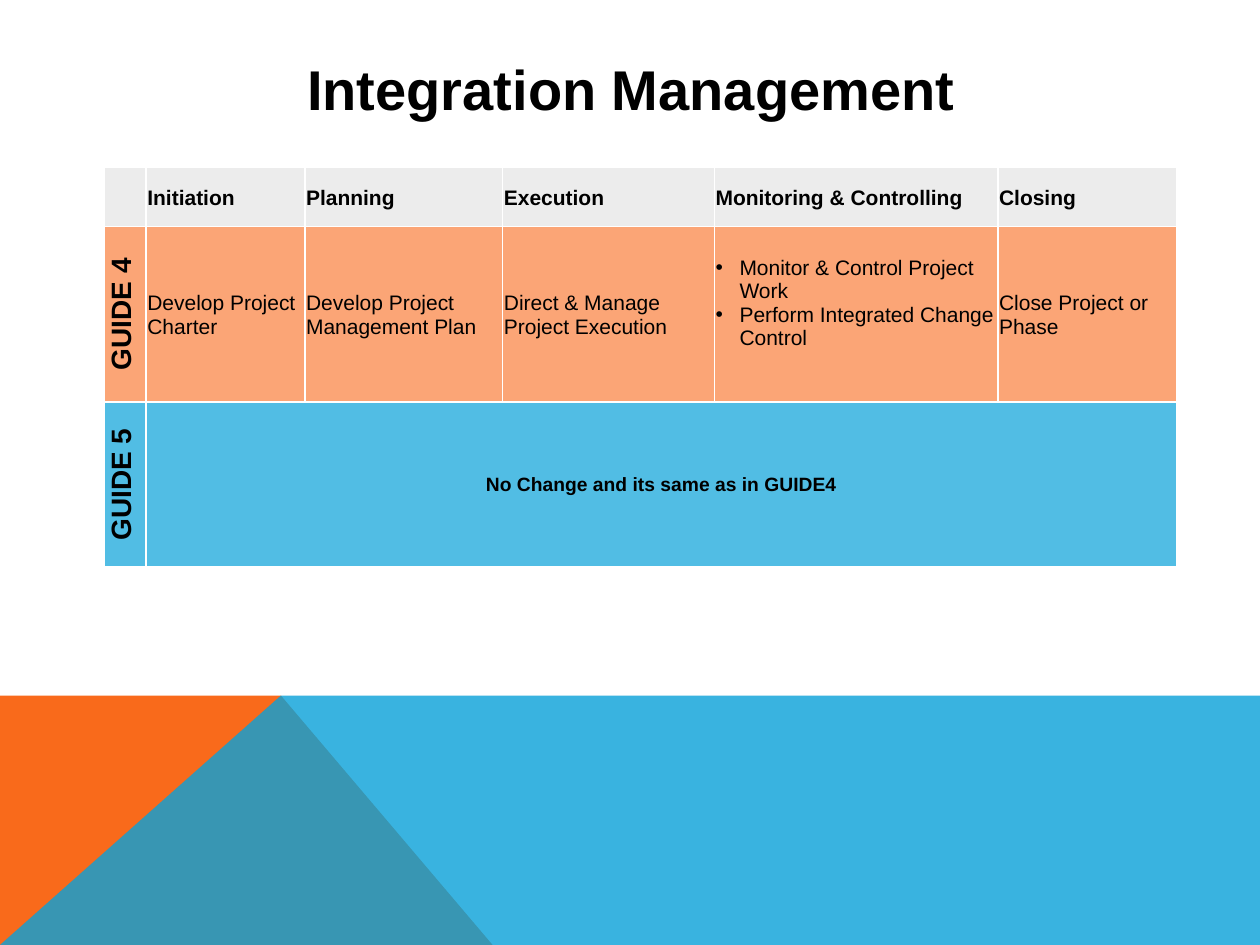
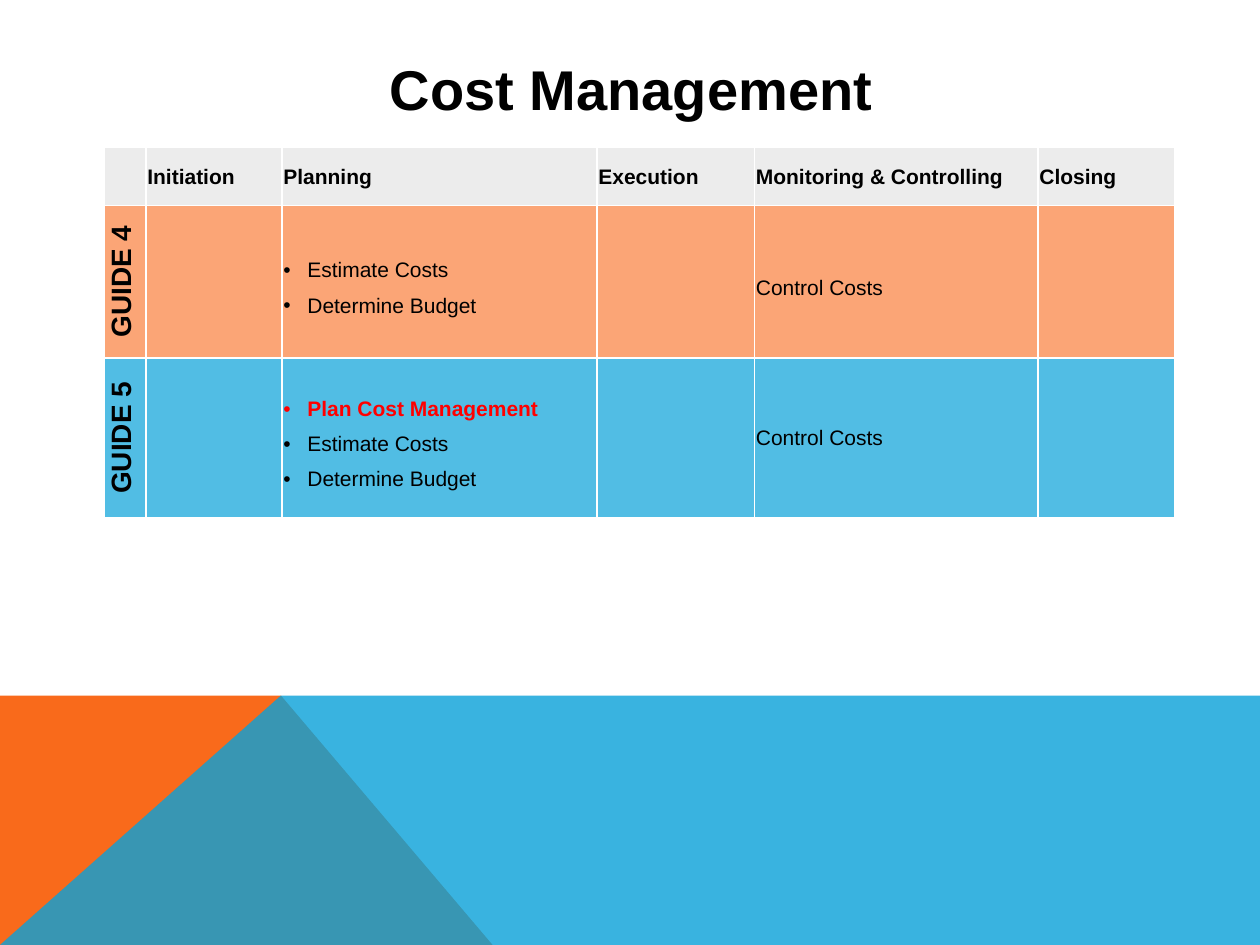
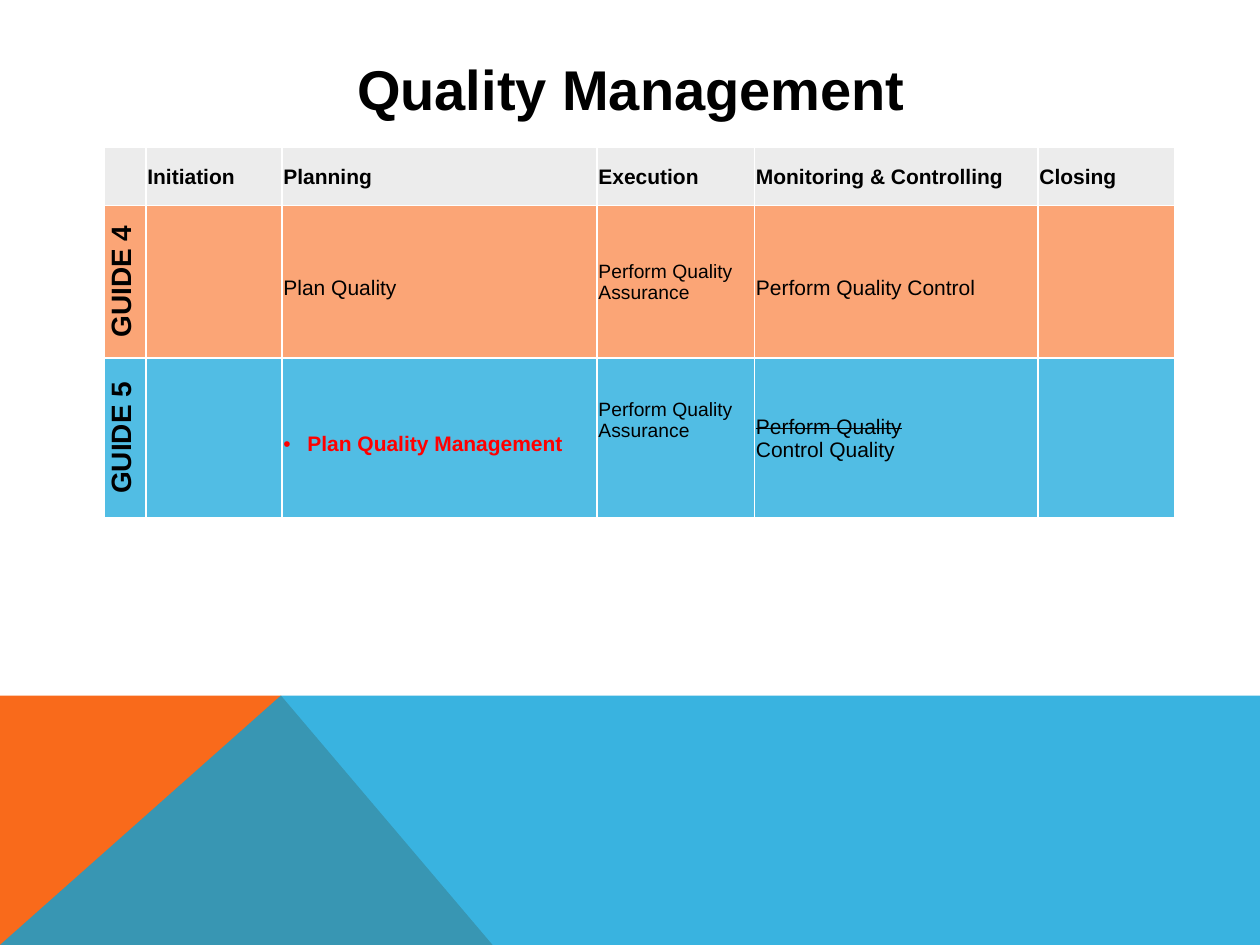
from dataclasses import dataclass

from lxml.etree import SubElement
from pptx import Presentation
from pptx.dml.color import RGBColor
from pptx.enum.text import MSO_ANCHOR as Anchor, PP_ALIGN as Align
from pptx.oxml import parse_xml
from pptx.oxml.ns import nsdecls, qn
from pptx.util import Inches, Pt

BLACK = RGBColor(0x00, 0x00, 0x00)
RED = RGBColor(0xFF, 0x00, 0x00)
GREY = RGBColor(0xEC, 0xEC, 0xEC)
ORANGE = RGBColor(0xF9, 0x6A, 0x1B)
BLUE = RGBColor(0x08, 0xA1, 0xD9)
BORDER = "FFFFFF"
FONT = "Arial"

PAGE_W, PAGE_H = 10, 7.5
TITLE_BOX = (0.9, 0.4, 8.22, 0.6)
BAND_TOP, BAND_PEAK, BAND_FOOT = 5.52, 2.23, 3.91
TABLE_LEFT = 0.83
INDENT = 0.19

PHASES = ["Initiation", "Planning", "Execution", "Monitoring & Controlling", "Closing"]
EDITIONS = [("GUIDE 4", ORANGE, 60), ("GUIDE 5", BLUE, 70)]


@dataclass
class Line:
    text: str
    size: int = 12
    bold: bool = False
    color: RGBColor = BLACK
    align: Align = Align.LEFT
    spacing: float = 1.0
    bullet: bool = False
    strike: bool = False


@dataclass
class Entry:
    """The lines of one table cell; lift is the free space kept below them."""
    lines: list
    lift: float = 0
    anchor: Anchor = Anchor.MIDDLE


@dataclass
class Grid:
    top: float
    columns: list
    rows: list


WIDE_GRID = Grid(1.33, [0.33, 1.26, 1.57, 1.68, 2.25, 1.42], [0.47, 1.39, 1.31])
PLAN_GRID = Grid(1.17, [0.33, 1.08, 2.5, 1.25, 2.25, 1.08], [0.46, 1.21, 1.27])


def entry(text, lift=0, **style):
    return Entry([Line(text, **style)], lift)


def bullets(*texts, spacing=1.5):
    return [Line(text, bullet=True, spacing=spacing) for text in texts]


def new_process(text):
    return Line(text, bullet=True, spacing=1.5, bold=True, color=RED)


COSTS = bullets("Estimate Costs", "Determine Budget")
ASSURANCE = "Perform Quality Assurance"

# One list of phase entries per edition; a single entry spans all phases.
SLIDES = [
    ("Integration Management", WIDE_GRID, [
        [entry("Develop Project Charter"),
         entry("Develop Project Management Plan"),
         entry("Direct & Manage Project Execution"),
         Entry(bullets("Monitor & Control Project Work",
                       "Perform Integrated Change Control", spacing=1.0), lift=0.19),
         entry("Close Project or Phase")],
        [entry("No Change and its same as in GUIDE4", size=11, bold=True,
               align=Align.CENTER)],
    ]),
    ("Cost Management", PLAN_GRID, [
        [None, Entry(COSTS), None, entry("Control Costs", spacing=1.5), None],
        [None, Entry([new_process("Plan Cost Management"), *COSTS]), None,
         entry("Control Costs"), None],
    ]),
    ("Quality Management", PLAN_GRID, [
        [None, entry("Plan Quality", spacing=1.5), entry(ASSURANCE, size=11),
         entry("Perform Quality Control", spacing=1.5), None],
        [None, Entry([new_process("Plan Quality Management")]),
         entry(ASSURANCE, size=11, lift=0.29),
         Entry([Line("Perform Quality", strike=True), Line("Control Quality")]), None],
    ]),
]


def paint(fill, color, opacity=100):
    fill.solid()
    fill.fore_color.rgb = color
    if opacity < 100:
        tone = fill._xPr.find(".//" + qn("a:srgbClr"))
        SubElement(tone, qn("a:alpha"), val=str(opacity * 1000))


def write_lines(frame, lines):
    for index, line in enumerate(lines):
        para = frame.paragraphs[0] if index == 0 else frame.add_paragraph()
        para.alignment = line.align
        para.line_spacing = line.spacing
        if line.bullet:
            props = para._p.get_or_add_pPr()
            props.set("marL", str(Inches(INDENT)))
            props.set("indent", str(-Inches(INDENT)))
            SubElement(props, qn("a:buFont"), typeface=FONT)
            SubElement(props, qn("a:buChar"), char="•")
        span = para.add_run()
        span.text = line.text
        look = {"name": FONT, "size": Pt(line.size), "bold": line.bold}
        for name, value in look.items():
            setattr(span.font, name, value)
        span.font.color.rgb = line.color
        if line.strike:
            span.font._element.set("strike", "sngStrike")


def add_polygon(page, points, color, opacity=100):
    corners = [(Inches(x), Inches(y)) for x, y in points]
    builder = page.shapes.build_freeform(*corners[0], scale=1.0)
    builder.add_line_segments(corners[1:], close=True)
    shape = builder.convert_to_shape()
    shape.shadow.inherit = False
    shape.line.fill.background()
    paint(shape.fill, color, opacity)


def add_band(page):
    peak = (BAND_PEAK, BAND_TOP)
    corner = (0, PAGE_H)
    add_polygon(page, [corner, (0, BAND_TOP), peak, (BAND_FOOT, PAGE_H)], ORANGE)
    add_polygon(page, [corner, peak, (PAGE_W, BAND_TOP), (PAGE_W, PAGE_H)], BLUE, 80)


def add_title(page, text, place):
    frame = page.shapes.add_textbox(*map(Inches, place)).text_frame
    frame.word_wrap = True
    frame.vertical_anchor = Anchor.MIDDLE
    write_lines(frame, [Line(text, size=32, bold=True, align=Align.CENTER)])


def add_borders(cell):
    props = cell._tc.get_or_add_tcPr()
    for index, side in enumerate("LRTB"):
        props.insert(index, parse_xml(
            f'<a:ln{side} {nsdecls("a")} w="{Pt(1)}"><a:solidFill>'
            f'<a:srgbClr val="{BORDER}"/></a:solidFill></a:ln{side}>'))


def fill_cell(cell, content):
    margin = Inches(0.01)
    look = {"vertical_anchor": content.anchor, "margin_left": margin,
            "margin_right": margin, "margin_top": margin,
            "margin_bottom": Inches(content.lift)}
    for name, value in look.items():
        setattr(cell, name, value)
    write_lines(cell.text_frame, content.lines)


def add_edition_label(cell, name):
    label = Line(name, size=16, bold=True, align=Align.CENTER)
    fill_cell(cell, Entry([label], anchor=Anchor.BOTTOM))
    cell._tc.get_or_add_tcPr().set("vert", "vert270")


def add_phase_table(page, grid, editions):
    place = (TABLE_LEFT, grid.top, sum(grid.columns), sum(grid.rows))
    table = page.shapes.add_table(len(grid.rows), len(grid.columns),
                                  *map(Inches, place)).table
    table.first_row = table.horz_banding = False
    for column, width in zip(table.columns, grid.columns):
        column.width = Inches(width)
    for row, height in zip(table.rows, grid.rows):
        row.height = Inches(height)

    tones = [(GREY, 100)] + [(color, opacity) for _, color, opacity in EDITIONS]
    for row, tone in zip(table.rows, tones):
        for cell in row.cells:
            paint(cell.fill, *tone)
            add_borders(cell)

    for col, phase in enumerate(PHASES, start=1):
        fill_cell(table.cell(0, col), entry(phase, bold=True))
    for row, ((name, _, _), entries) in enumerate(zip(EDITIONS, editions), start=1):
        add_edition_label(table.cell(row, 0), name)
        if len(entries) == 1:
            table.cell(row, 1).merge(table.cell(row, len(PHASES)))
        for col, content in enumerate(entries, start=1):
            if content:
                fill_cell(table.cell(row, col), content)


def main():
    deck = Presentation()
    deck.slide_width, deck.slide_height = Inches(PAGE_W), Inches(PAGE_H)
    blank = deck.slide_layouts[6]
    for title, grid, editions in SLIDES:
        page = deck.slides.add_slide(blank)
        add_band(page)
        add_title(page, title, TITLE_BOX)
        add_phase_table(page, grid, editions)
    deck.save("out.pptx")


if __name__ == "__main__":
    main()
